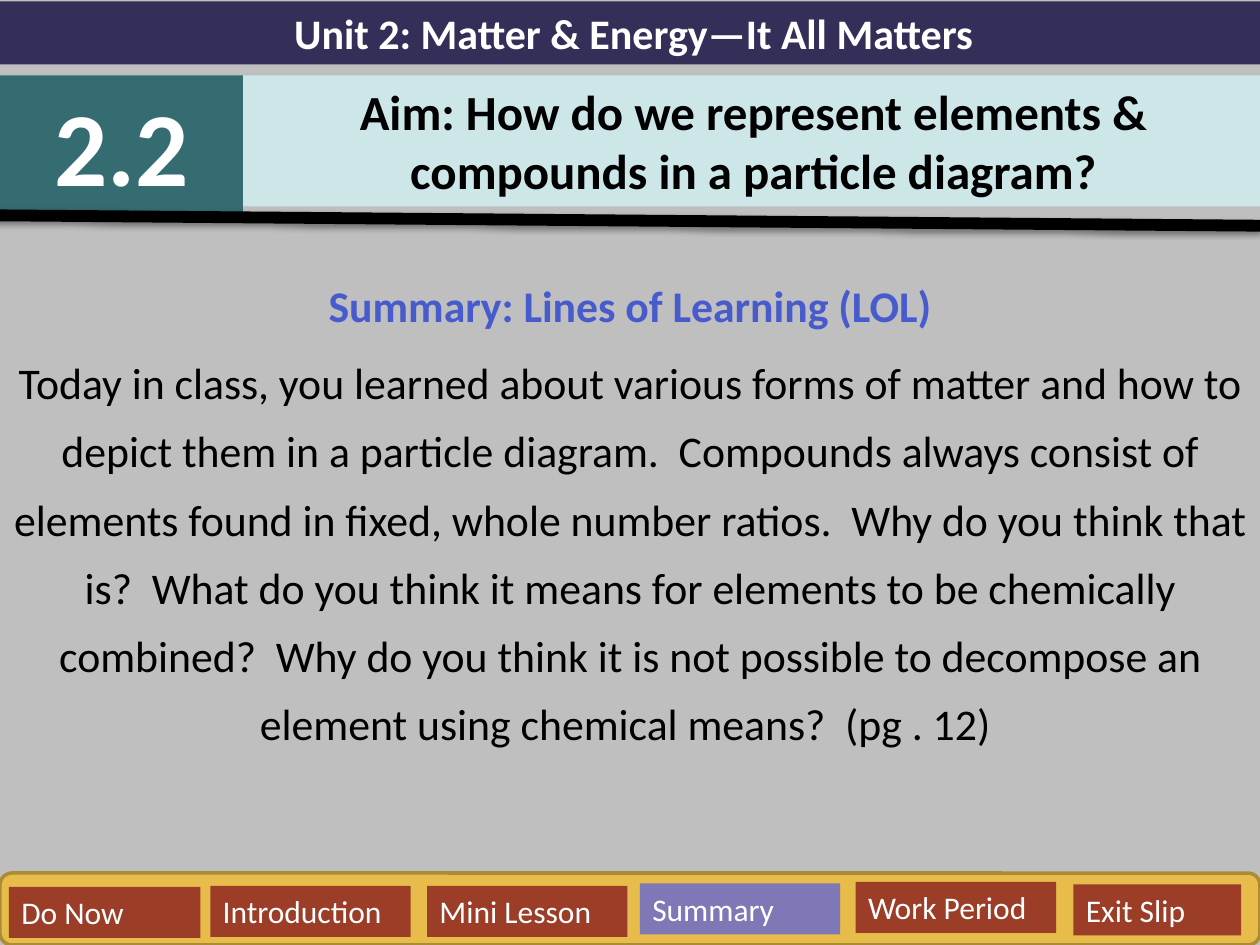
from lxml import etree
from pptx import Presentation
from pptx.dml.color import RGBColor
from pptx.enum.shapes import MSO_CONNECTOR, MSO_SHAPE
from pptx.enum.text import MSO_ANCHOR, MSO_AUTO_SIZE, PP_ALIGN
from pptx.oxml.ns import qn
from pptx.util import Cm, Pt

RECTANGLE, ROUNDED = MSO_SHAPE.RECTANGLE, MSO_SHAPE.ROUNDED_RECTANGLE
STRAIGHT = MSO_CONNECTOR.STRAIGHT
TOP, NO_AUTOFIT = MSO_ANCHOR.TOP, MSO_AUTO_SIZE.NONE
LEFT, CENTER = PP_ALIGN.LEFT, PP_ALIGN.CENTER

UNIT = "Unit 2: Matter & Energy—It All Matters"
LESSON = "2.2"
AIM = "Aim: How do we represent elements & compounds in a particle diagram?"
SUMMARY_HEADING = "Summary: Lines of Learning (LOL)"
SUMMARY_TEXT = (
    "Today in class, you learned about various forms of matter and how to "
    "depict them in a particle diagram.  Compounds always consist of elements "
    "found in fixed, whole number ratios.  Why do you think that is?  What do "
    "you think it means for elements to be chemically combined?  Why do you "
    "think it is not possible to decompose an element using chemical means?  "
    "(pg . 12) "
)
CURRENT_TAB = "Summary"
TABS = [  # label, left, top, width in cm
    ("Do Now", 0.18, 17.88, 3.86),
    ("Introduction", 4.24, 17.86, 4.04),
    ("Mini Lesson", 8.61, 17.86, 4.04),
    ("Summary", 12.9, 17.81, 4.04),
    ("Work Period", 17.25, 17.78, 4.04),
    ("Exit Slip", 21.64, 17.83, 3.38),
]
TAB_HEIGHT = 1.03

THEME = {
    "font": "Calibri",
    "colors": {
        "background": "BFBFBF", "unit": "342F59", "lesson": "346C71",
        "aim": "CDE6E8", "bar": "E8BC4A", "bar_line": "AC8B37",
        "tab": "9C3D28", "current_tab": "7E78B7", "heading": "475BCD",
        "dark": "000000", "light": "FFFFFF",
    },
    "sizes": {"unit": 24, "lesson": 60, "aim": 28, "body": 25, "tab": 18},
}


def color(name):
    return RGBColor.from_string(THEME["colors"][name])


def set_fill(item, color_name):
    item.fill.solid()
    item.fill.fore_color.rgb = color(color_name)


def place(shape, left, top, width, height):
    box = {"left": left, "top": top, "width": width, "height": height}
    for name, value in box.items():
        setattr(shape, name, Cm(value))


def write(shape, paragraphs, size, alignment=CENTER, **paragraph_format):
    """Fill a shape with (text, colour name, bold) paragraphs."""
    frame = shape.text_frame
    frame_format = {"word_wrap": True, "auto_size": NO_AUTOFIT, "vertical_anchor": TOP}
    for name, value in frame_format.items():
        setattr(frame, name, value)
    for index, (text, color_name, bold) in enumerate(paragraphs):
        paragraph = frame.add_paragraph() if index else frame.paragraphs[0]
        for name, value in {"alignment": alignment, **paragraph_format}.items():
            setattr(paragraph, name, value)
        run = paragraph.add_run()
        run.text = text
        run.font.color.rgb = color(color_name)
        font_format = {"name": THEME["font"], "size": Pt(THEME["sizes"][size]), "bold": bold}
        for name, value in font_format.items():
            setattr(run.font, name, value)


def add_panel(slide, box, fill, kind=RECTANGLE):
    shape = slide.shapes.add_shape(kind, *map(Cm, box))
    shape.shadow.inherit = False
    set_fill(shape, fill)
    shape.line.fill.background()
    return shape


def add_header(slide):
    unit = add_panel(slide, (0, 0.03, 25.55, 1.27), "unit")
    write(unit, [(UNIT, "light", True)], "unit")
    lesson = add_panel(slide, (0, 1.52, 4.9, 2.82), "lesson")
    write(lesson, [(LESSON, "light", True)], "lesson")

    title = slide.shapes.title
    place(title, 4.9, 1.52, 20.57, 2.64)
    set_fill(title, "aim")
    write(title, [(AIM, "dark", True)], "aim")


def add_divider(slide):
    divider = slide.shapes.add_connector(STRAIGHT, Cm(-0.13), Cm(4.34), Cm(25.4), Cm(4.55))
    divider.line.color.rgb = color("dark")
    divider.line.width = Pt(6.75)
    effects = etree.SubElement(divider._element.spPr, qn("a:effectLst"))
    shadow = etree.SubElement(
        effects, qn("a:outerShdw"), blurRad=str(Pt(3.1)), dist=str(Pt(1.6)),
        dir="5400000", rotWithShape="0")
    shade = etree.SubElement(shadow, qn("a:srgbClr"), val=THEME["colors"]["dark"])
    etree.SubElement(shade, qn("a:alpha"), val="38000")


def add_summary(slide):
    body = slide.placeholders[1]
    place(body, 0, 5.18, 25.4, 12.65)
    paragraphs = [(SUMMARY_HEADING, "heading", True), (SUMMARY_TEXT, "dark", False)]
    write(body, paragraphs, "body", line_spacing=1.3, space_before=Pt(5))


def add_navigation(slide):
    bar = add_panel(slide, (0, 17.6, 25.4, 1.45), "bar", ROUNDED)
    bar.line.color.rgb = color("bar_line")
    bar.line.width = Pt(2)
    for label, left, top, width in TABS:
        fill = "current_tab" if label == CURRENT_TAB else "tab"
        tab = add_panel(slide, (left, top, width, TAB_HEIGHT), fill)
        write(tab, [(label, "light", False)], "tab", LEFT)


def main():
    presentation = Presentation()
    presentation.slide_width, presentation.slide_height = Cm(25.4), Cm(19.05)
    slide = presentation.slides.add_slide(presentation.slide_layouts[0])
    set_fill(slide.background, "background")
    add_summary(slide)
    add_header(slide)
    add_divider(slide)
    add_navigation(slide)
    presentation.save("out.pptx")


if __name__ == "__main__":
    main()
